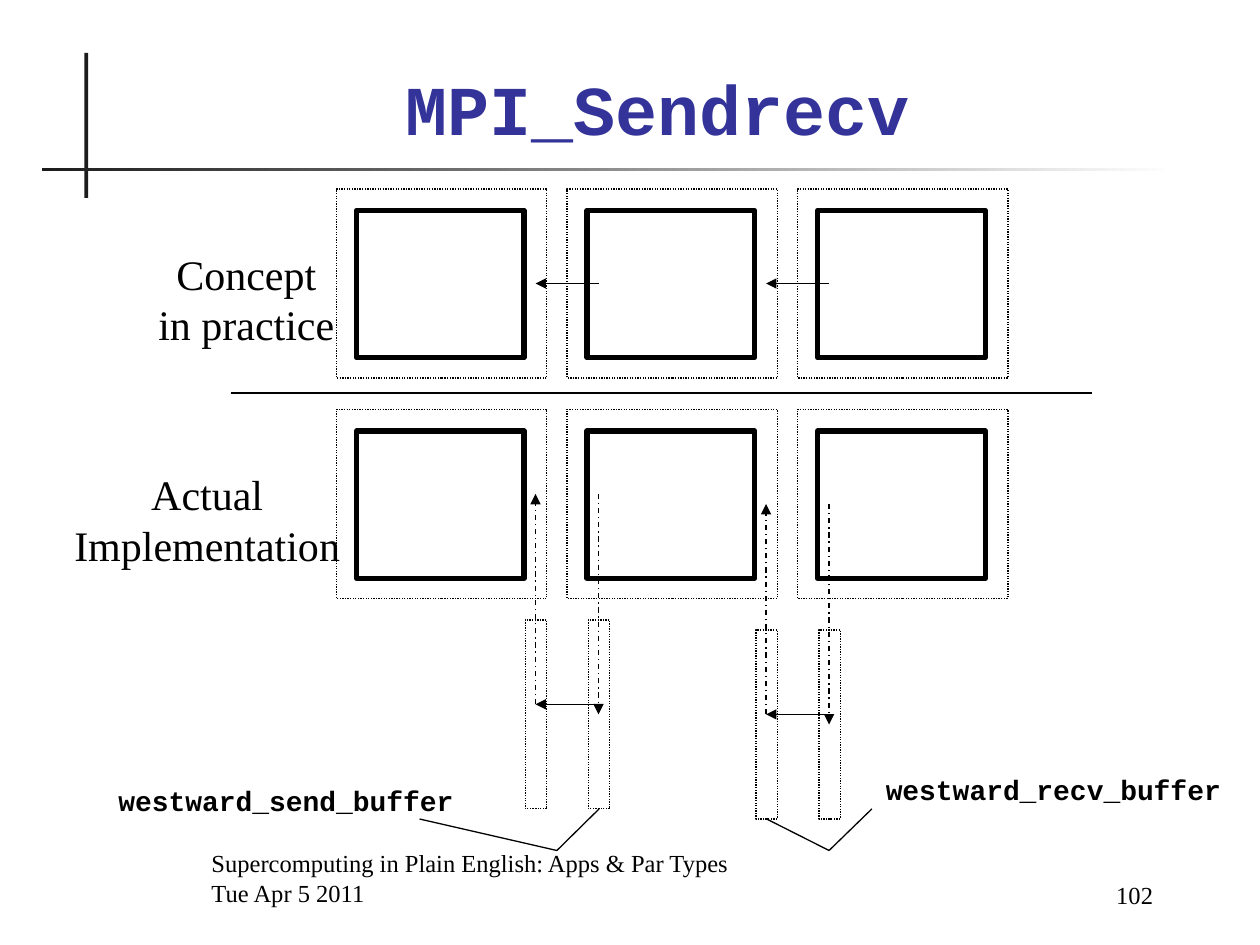
"""Build the MPI_Sendrecv slide: concept against actual implementation."""
from typing import NamedTuple, Optional

from lxml.etree import SubElement
from pptx import Presentation
from pptx.dml.color import RGBColor
from pptx.enum.dml import MSO_LINE_DASH_STYLE as Dash
from pptx.enum.shapes import MSO_CONNECTOR as ConnectorType, MSO_SHAPE as ShapeType
from pptx.enum.text import MSO_ANCHOR as Anchor, MSO_AUTO_SIZE as AutoSize, PP_ALIGN as Align
from pptx.oxml.ns import qn
from pptx.shapes.autoshape import Shape
from pptx.shapes.connector import Connector
from pptx.slide import Slide
from pptx.util import Inches, Pt

BLACK = RGBColor(0x00, 0x00, 0x00)
CHARCOAL = RGBColor(0x1C, 0x1C, 0x1C)
WHITE = RGBColor(0xFF, 0xFF, 0xFF)
TITLE_BLUE = RGBColor(0x33, 0x33, 0x99)
SERIF = "Times New Roman"
MONO = "Courier New"

PANEL_LEFTS = [2.67 + 1.83 * column for column in range(3)]
CONCEPT_TOP, ACTUAL_TOP = 1.5, 3.25
BUFFER_GAP = 0.5
BOTTOM_SITE = 2


class Box(NamedTuple):
    left: float
    top: float
    width: float
    height: float


class Point(NamedTuple):
    x: float
    y: float


class Label(NamedTuple):
    box: Box
    lines: list[str]
    size: int
    font: str = SERIF
    bold: bool = False
    align: Align = Align.CENTER
    anchor: Anchor = Anchor.TOP
    wrap: bool = False
    color: RGBColor = BLACK


class BufferPair(NamedTuple):
    left: float
    top: float


LABELS = [
    Label(Box(1.15, 1.92, 1.61, 0.91), ["Concept", "in practice"], 24),
    Label(Box(0.48, 3.67, 2.33, 0.91), ["Actual", "Implementation"], 24),
    Label(Box(0.83, 6.17, 2.88, 0.37), ["westward_send_buffer"], 16, MONO, True),
    Label(Box(6.92, 6.08, 2.88, 0.37), ["westward_recv_buffer"], 16, MONO, True),
    Label(Box(1.58, 6.75, 6.08, 0.5),
          ["Supercomputing in Plain English: Apps & Par Types", "Tue Apr 5 2011"],
          14, align=Align.LEFT, anchor=Anchor.BOTTOM, wrap=True),
    Label(Box(7.83, 6.77, 1.42, 0.5), ["102"], 14,
          align=Align.RIGHT, anchor=Anchor.BOTTOM, wrap=True),
]
TITLE = Label(Box(0.83, 0.5, 8.77, 0.74), ["MPI_Sendrecv"], 40, MONO, True,
              anchor=Anchor.BOTTOM, wrap=True, color=TITLE_BLUE)
SEND_PAIR = BufferPair(4.17, 4.92)
RECEIVE_PAIR = BufferPair(6.0, 5.0)


def add_rectangle(slide: Slide, box: Box) -> Shape:
    shape = slide.shapes.add_shape(ShapeType.RECTANGLE, *map(Inches, box))
    shape.shadow.inherit = False
    return shape


def add_outline(slide: Slide, box: Box, weight: float, dash: Optional[Dash] = None) -> Shape:
    shape = add_rectangle(slide, box)
    shape.fill.background()
    shape.line.color.rgb = BLACK
    shape.line.width = Pt(weight)
    if dash is not None:
        shape.line.dash_style = dash
    return shape


def add_line(slide: Slide, start: Point, end: Point, arrow: bool = False,
             dash: Optional[Dash] = None) -> Connector:
    connector = slide.shapes.add_connector(
        ConnectorType.STRAIGHT, *map(Inches, (*start, *end)))
    connector.line.color.rgb = BLACK
    connector.line.width = Pt(0.75)
    if dash is not None:
        connector.line.dash_style = dash
    if arrow:
        SubElement(connector.line._get_or_add_ln(), qn("a:tailEnd"), type="triangle")
    SubElement(connector._element.spPr, qn("a:effectLst"))
    return connector


def write_label(shape: Shape, label: Label) -> None:
    frame = shape.text_frame
    frame.word_wrap = label.wrap
    frame.auto_size = AutoSize.NONE if label.wrap else AutoSize.SHAPE_TO_FIT_TEXT
    frame.vertical_anchor = label.anchor
    for index, line in enumerate(label.lines):
        paragraph = frame.add_paragraph() if index else frame.paragraphs[0]
        paragraph.alignment = label.align
        run = paragraph.add_run()
        run.text = line
        run.font.name = label.font
        run.font.size = Pt(label.size)
        run.font.bold = label.bold
        run.font.color.rgb = label.color


def add_label(slide: Slide, label: Label) -> None:
    write_label(slide.shapes.add_textbox(*map(Inches, label.box)), label)


def add_title(slide: Slide) -> None:
    title = slide.shapes.title
    title.left, title.top, title.width, title.height = map(Inches, TITLE.box)
    write_label(title, TITLE)


def add_title_rules(slide: Slide) -> None:
    upright = add_rectangle(slide, Box(0.67, 0.42, 0.03, 1.15))
    upright.fill.solid()
    upright.fill.fore_color.rgb = CHARCOAL
    level = add_rectangle(slide, Box(0.33, 1.33, 9, 0.03))
    level.fill.gradient()
    level.fill.gradient_angle = 0
    for stop, position, color in zip(level.fill.gradient_stops, (0, 1), (CHARCOAL, WHITE)):
        stop.position = position
        stop.color.rgb = color
    for rule in (upright, level):
        rule.line.fill.background()


def add_panel_row(slide: Slide, top: float) -> None:
    for left in PANEL_LEFTS:
        add_outline(slide, Box(left + 0.16, top + 0.17, 1.33, 1.17), 3)
        add_outline(slide, Box(left, top, 1.67, 1.5), 0.75, Dash.ROUND_DOT)


def add_buffer_pair(slide: Slide, pair: BufferPair) -> list[Shape]:
    target = pair.left + 0.08
    source = target + BUFFER_GAP
    panel_y, message_y = pair.top - 1, pair.top + 0.67
    buffers = [add_outline(slide, Box(left, pair.top, 0.17, 1.5), 0.75, Dash.ROUND_DOT)
               for left in (pair.left, pair.left + BUFFER_GAP)]
    add_line(slide, Point(target, message_y), Point(target, panel_y), True, Dash.DASH_DOT)
    add_line(slide, Point(source, panel_y), Point(source, pair.top + 0.75), True, Dash.DASH_DOT)
    add_line(slide, Point(source, message_y), Point(target, message_y), True)
    return buffers


def add_callout(slide: Slide, buffer: Shape, corner: Point, label_end: Point) -> None:
    connector = add_line(slide, corner, corner)
    connector.begin_connect(buffer, BOTTOM_SITE)
    add_line(slide, label_end, corner)


def main() -> None:
    presentation = Presentation()
    presentation.slide_width, presentation.slide_height = Inches(10), Inches(7.5)
    slide = presentation.slides.add_slide(presentation.slide_layouts[5])
    add_title_rules(slide)
    add_title(slide)
    for top in (CONCEPT_TOP, ACTUAL_TOP):
        add_panel_row(slide, top)
    for target in (4.25, 6.08):
        add_line(slide, Point(target + BUFFER_GAP, 2.25), Point(target, 2.25), True)
    add_line(slide, Point(1.83, 3.12), Point(8.67, 3.12))
    send_buffer = add_buffer_pair(slide, SEND_PAIR)[1]
    receive_buffer = add_buffer_pair(slide, RECEIVE_PAIR)[0]
    add_callout(slide, send_buffer, Point(4.42, 6.75), Point(3.33, 6.5))
    add_callout(slide, receive_buffer, Point(6.58, 6.75), Point(6.92, 6.42))
    for label in LABELS:
        add_label(slide, label)
    presentation.save("out.pptx")


if __name__ == "__main__":
    main()
